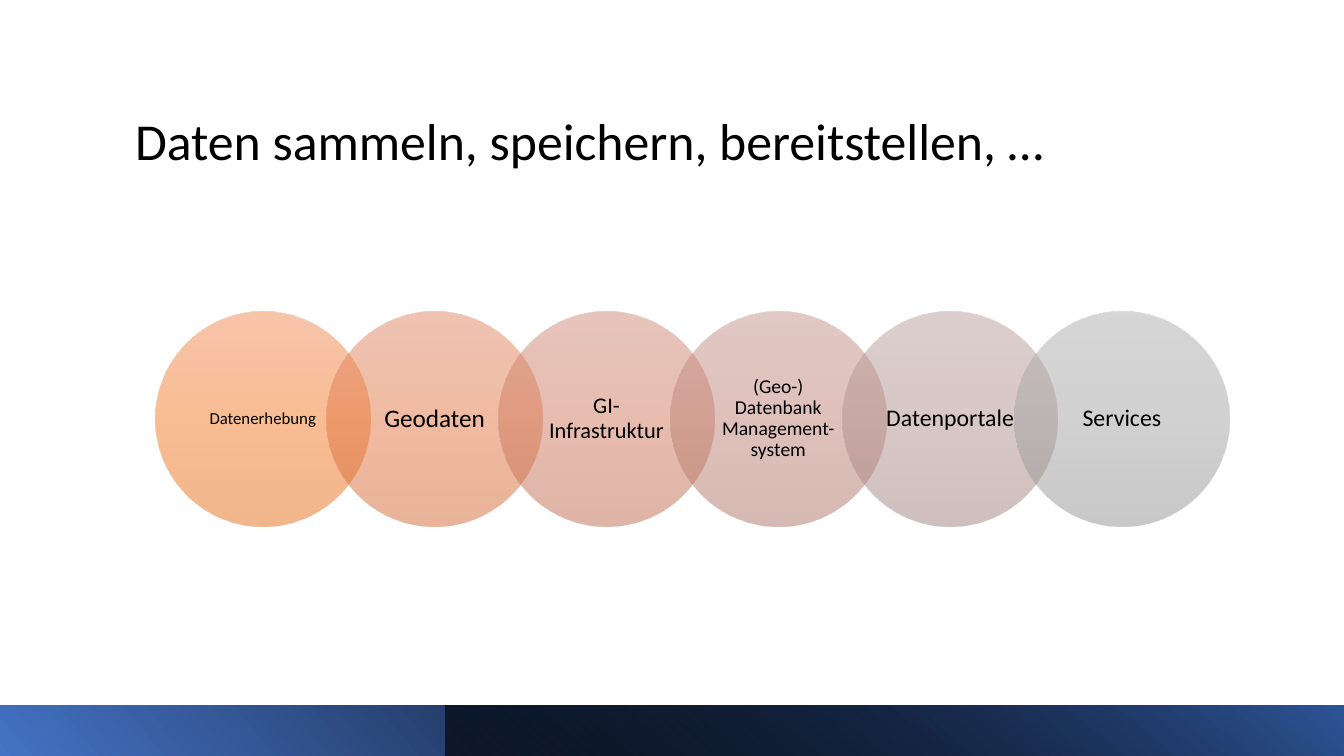
from copy import deepcopy

from lxml.etree import SubElement
from pptx import Presentation
from pptx.dml.color import RGBColor
from pptx.enum.shapes import MSO_SHAPE
from pptx.enum.text import MSO_ANCHOR, MSO_AUTO_SIZE, PP_ALIGN
from pptx.oxml.ns import qn
from pptx.util import Cm, Pt

BLACK = RGBColor(0x00, 0x00, 0x00)
BLUE = RGBColor(0x44, 0x72, 0xC4)
DARK_BLUE = RGBColor(0x2F, 0x55, 0x97)

PAGE_WIDTH, PAGE_HEIGHT = 33.87, 19.05
BAR_HEIGHT = 1.27
BAR_SPLIT = 11.22
CIRCLE_LEFT, CIRCLE_TOP = 3.91, 7.84
CIRCLE_SIZE, CIRCLE_STEP = 5.43, 4.33

# Label, text size and the three gradient colours of each circle
STEPS = [
    ("Datenerhebung", 12, ("F18C57", "F67B28", "E56C19")),
    ("Geodaten", 18, ("E18A66", "E37744", "D26734")),
    ("GI-Infrastruktur", 16, ("D28C78", "D17A5F", "C06A4E")),
    ("(Geo-)\nDatenbank Management-\nsystem", 14, ("C5948B", "C18478", "AF7267")),
    ("Datenportale", 17, ("B9A09D", "B2928F", "A0807D")),
    ("Services", 17, ("AFAFAF", "A5A5A5", "939393")),
]


def write_text(frame, text, size, font="Calibri", color=BLACK,
               align=PP_ALIGN.LEFT, anchor=MSO_ANCHOR.MIDDLE):
    frame.word_wrap = True
    frame.auto_size = MSO_AUTO_SIZE.NONE
    frame.vertical_anchor = anchor
    para = frame.paragraphs[0]
    para.text = text
    para.alignment = align
    para.line_spacing = 0.9
    for span in para.runs:
        span.font.name = font
        span.font.size = Pt(size)
        span.font.color.rgb = color
    # Line breaks take the format of the text around them
    for line_break in para._p.findall(qn("a:br")):
        line_break.insert(0, deepcopy(para.runs[0]._r.rPr))


class Page:
    def __init__(self, deck):
        self.slide = deck.slides.add_slide(deck.slide_layouts[5])

    def title(self, text, left, top, width, height, size):
        box = self.slide.shapes.title
        box.left, box.top = Cm(left), Cm(top)
        box.width, box.height = Cm(width), Cm(height)
        write_text(box.text_frame, text, size, anchor=MSO_ANCHOR.BOTTOM)

    def shape(self, kind, left, top, width, height, stops, angle):
        """Add a shape with stops of (position %, colour, opacity %)."""
        shape = self.slide.shapes.add_shape(
            kind, Cm(left), Cm(top), Cm(width), Cm(height))
        shape.shadow.inherit = False
        shape.line.fill.background()
        shape.fill.gradient()
        gradient = shape._element.spPr.find(qn("a:gradFill"))
        stop_list = gradient.find(qn("a:gsLst"))
        for old_stop in list(stop_list):
            stop_list.remove(old_stop)
        for position, color, opacity in stops:
            stop = SubElement(stop_list, qn("a:gs"), pos=str(position * 1000))
            fill = SubElement(stop, qn("a:srgbClr"), val=str(color))
            SubElement(fill, qn("a:alpha"), val=str(opacity * 1000))
        shape.fill.gradient_angle = angle
        return shape

    def bar(self, left, stops, angle):
        self.shape(MSO_SHAPE.RECTANGLE, left, PAGE_HEIGHT - BAR_HEIGHT,
                   PAGE_WIDTH - left, BAR_HEIGHT, stops, angle)

    def circle(self, left, label, size, colors):
        stops = [(50 * i, color, 50) for i, color in enumerate(colors)]
        shape = self.shape(MSO_SHAPE.OVAL, left, CIRCLE_TOP,
                           CIRCLE_SIZE, CIRCLE_SIZE, stops, 270)
        frame = shape.text_frame
        frame.margin_left = frame.margin_right = Cm(0.25)
        frame.margin_top = frame.margin_bottom = Cm(0.05)
        write_text(frame, label, size, align=PP_ALIGN.CENTER)


def main():
    deck = Presentation()
    deck.slide_width, deck.slide_height = Cm(PAGE_WIDTH), Cm(PAGE_HEIGHT)
    page = Page(deck)

    # Title
    page.title("Daten sammeln, speichern, bereitstellen, …",
               3.15, 1.4, 24.49, 3.05, size=37)

    # Footer bars
    page.bar(0, [(0, BLUE, 100), (78, BLACK, 100)], 40)
    page.bar(BAR_SPLIT, [(0, BLACK, 63), (100, DARK_BLUE, 100)], 50)

    # Chain of overlapping circles
    for index, (label, size, colors) in enumerate(STEPS):
        page.circle(CIRCLE_LEFT + index * CIRCLE_STEP, label, size, colors)

    deck.save("out.pptx")


if __name__ == "__main__":
    main()
